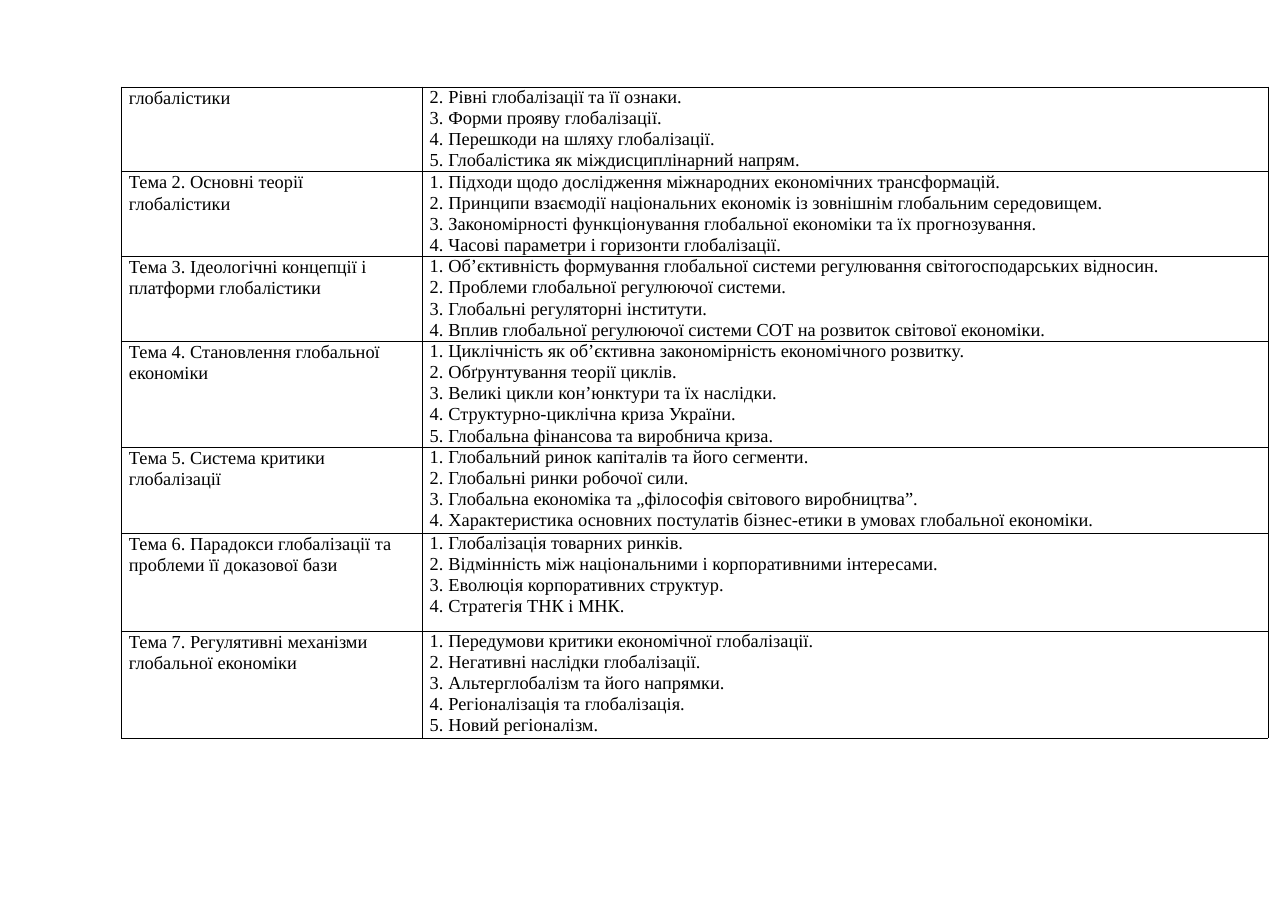
from dataclasses import dataclass

from lxml import etree
from pptx import Presentation
from pptx.dml.color import RGBColor
from pptx.oxml import ns
from pptx.util import Inches, Pt

TOPICS = [
    ("глобалістики", 2, [
        "Рівні глобалізації та її ознаки.",
        "Форми прояву глобалізації.",
        "Перешкоди на шляху глобалізації.",
        "Глобалістика як міждисциплінарний напрям.",
    ]),
    ("Тема 2. Основні теорії глобалістики", 1, [
        "Підходи щодо дослідження міжнародних економічних трансформацій.",
        "Принципи взаємодії національних економік із зовнішнім глобальним середовищем.",
        "Закономірності функціонування глобальної економіки та їх прогнозування.",
        "Часові параметри і горизонти глобалізації.",
    ]),
    ("Тема 3. Ідеологічні концепції і платформи глобалістики", 1, [
        "Об’єктивність формування глобальної системи регулювання світогосподарських відносин.",
        "Проблеми глобальної регулюючої системи.",
        "Глобальні регуляторні інститути.",
        "Вплив глобальної регулюючої системи СОТ на розвиток світової економіки.",
    ]),
    ("Тема 4. Становлення глобальної економіки", 1, [
        "Циклiчнiсть як oб’єктивнa зaкономiрнiсть eконoмiчнoго рoзвиткy.",
        "Обґрунтування теорії циклів.",
        "Великі цикли кон’юнктури та їх наслідки.",
        "Структурно-циклічна криза України.",
        "Глобальна фінансова та виробнича криза.",
    ]),
    ("Тема 5. Система критики глобалізації", 1, [
        "Глобальний ринок капіталів та його сегменти.",
        "Глобальні ринки робочої сили.",
        "Глобальна економіка та „філософія світового виробництва”.",
        "Характеристика основних постулатів бізнес-етики в умовах глобальної економіки.",
    ]),
    ("Тема 6. Парадокси глобалізації та проблеми її доказової бази", 1, [
        "Глобалізація товарних ринків.",
        "Відмінність між національними і корпоративними інтересами.",
        "Еволюція корпоративних структур.",
        "Стратегія ТНК і МНК.",
    ]),
    ("Тема 7. Регулятивні механізми глобальної економіки", 1, [
        "Передумови критики економічної глобалізації.",
        "Негативні наслідки глобалізації.",
        "Альтерглобалізм та його напрямки.",
        "Регіоналізація та глобалізація.",
        "Новий регіоналізм.",
    ]),
]
COLUMN_WIDTHS = [2.73, 7.68]
ROW_HEIGHTS = [0.77, 0.77, 0.77, 0.96, 0.78, 0.89, 0.97]


@dataclass(frozen=True)
class Theme:
    font: str = "Times New Roman"
    size: float = 12
    ink: str = "000000"
    border: float = 0.5
    leading: float = 13.8
    first_leading: float = 13.2
    topic_indent: float = 0.07
    topic_right: float = 0.2
    item_indent: float = 0.24
    item_hang: float = 0.17


THEME = Theme()


def add_xml(parent, tag, **attributes):
    return etree.SubElement(parent, ns.qn(tag), {k: str(v) for k, v in attributes.items()})


def format_cell(cell, right=0):
    cell.margin_left = cell.margin_top = cell.margin_bottom = 0
    cell.margin_right = Inches(right)
    properties = cell._tc.get_or_add_tcPr()
    for side in "LRTB":
        line = add_xml(properties, f"a:ln{side}", w=Pt(THEME.border))
        add_xml(add_xml(line, "a:solidFill"), "a:srgbClr", val=THEME.ink)
    cell.fill.background()


def format_para(para, left, hang=0, leading=THEME.leading):
    properties = para._p.get_or_add_pPr()
    properties.set("marL", str(Inches(left)))
    properties.set("indent", str(-Inches(hang)))
    para.line_spacing = Pt(leading)
    para.font.name = THEME.font
    para.font.size = Pt(THEME.size)
    para.font.color.rgb = RGBColor.from_string(THEME.ink)


def number_para(para, start):
    properties = para._p.get_or_add_pPr()
    add_xml(properties, "a:buAutoNum", type="arabicPeriod", startAt=start)
    tabs = add_xml(properties, "a:tabLst")
    add_xml(tabs, "a:tab", pos=Inches(THEME.item_indent), algn="l")


def fill_topic(cell, topic):
    format_cell(cell, THEME.topic_right)
    cell.text = topic
    format_para(cell.text_frame.paragraphs[0], THEME.topic_indent)


def fill_items(cell, items, start):
    format_cell(cell)
    cell.text = "\n".join(items)
    for index, para in enumerate(cell.text_frame.paragraphs):
        number_para(para, start)
        leading = THEME.leading if index else THEME.first_leading
        format_para(para, THEME.item_indent, THEME.item_hang, leading)


def main():
    deck = Presentation()
    deck.slide_width, deck.slide_height = Inches(11.69), Inches(8.27)
    page = deck.slides.add_slide(deck.slide_layouts[6])
    table = page.shapes.add_table(
        len(TOPICS), len(COLUMN_WIDTHS), Inches(1.1), Inches(0.79),
        Inches(sum(COLUMN_WIDTHS)), Inches(sum(ROW_HEIGHTS))).table
    table.first_row = table.horz_banding = False
    for column, width in zip(table.columns, COLUMN_WIDTHS):
        column.width = Inches(width)
    for row, height, (topic, start, items) in zip(table.rows, ROW_HEIGHTS, TOPICS):
        row.height = Inches(height)
        fill_topic(row.cells[0], topic)
        fill_items(row.cells[1], items, start)
    deck.save("out.pptx")


if __name__ == "__main__":
    main()
